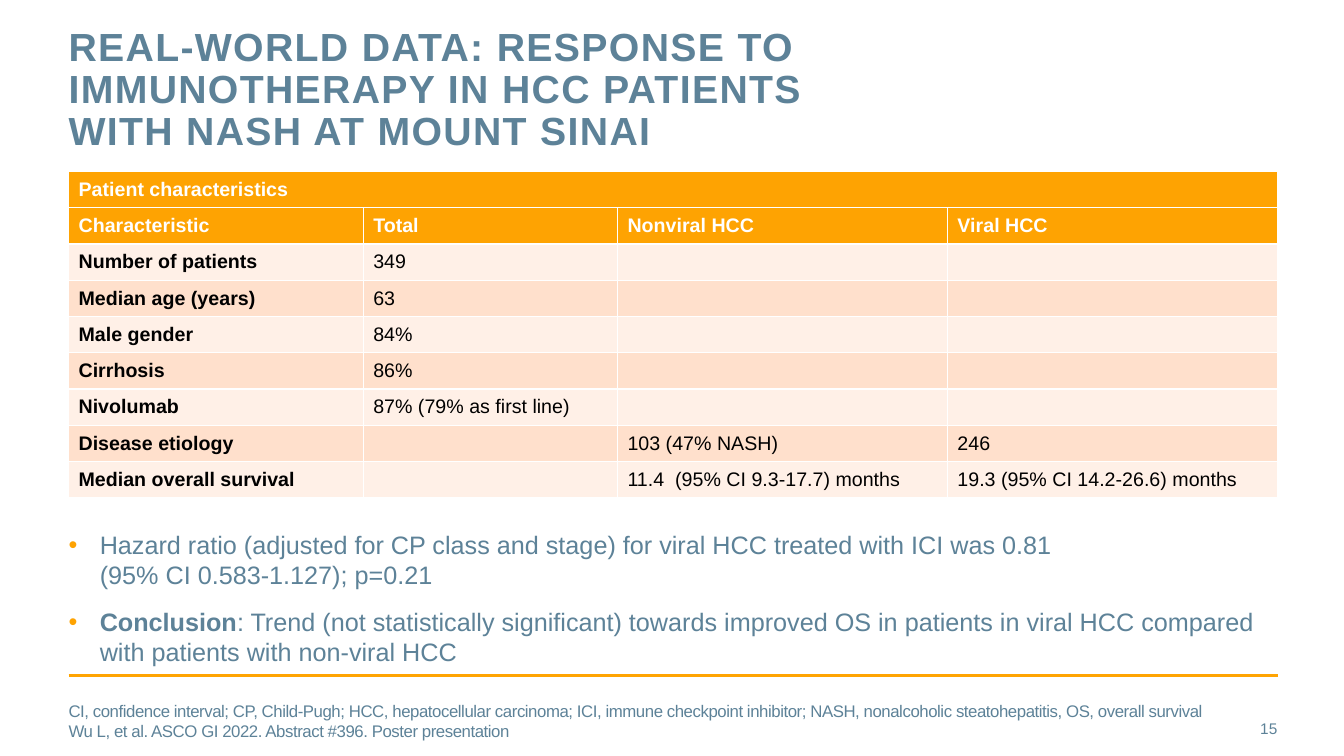
from lxml.etree import SubElement
from pptx import Presentation
from pptx.dml.color import RGBColor
from pptx.enum.shapes import MSO_CONNECTOR
from pptx.enum.text import MSO_ANCHOR, MSO_AUTO_SIZE, PP_ALIGN
from pptx.oxml.ns import qn
from pptx.util import Emu, Inches, Pt

SLATE = RGBColor(0x5D, 0x82, 0x98)
ORANGE = RGBColor(0xFE, 0xA3, 0x02)
RULE_ORANGE = RGBColor(0xFF, 0xA4, 0x02)
PALE_PEACH = RGBColor(0xFF, 0xF0, 0xE7)
PEACH = RGBColor(0xFF, 0xE0, 0xCC)
WHITE = RGBColor(0xFF, 0xFF, 0xFF)
BLACK = RGBColor(0, 0, 0)

FONT = "Arial"
LEFT, WIDTH = 0.68, 11.99
COLUMN_SHARES = (2.92, 2.52, 3.27, 3.27)
ROW_HEIGHT = 0.36
HEADER_ROWS = 2

CHARACTERISTICS = [
    ("Patient characteristics", "", "", ""),
    ("Characteristic", "Total", "Nonviral HCC", "Viral HCC"),
    ("Number of patients", "349", "", ""),
    ("Median age (years)", "63", "", ""),
    ("Male gender", "84%", "", ""),
    ("Cirrhosis", "86%", "", ""),
    ("Nivolumab", "87% (79% as first line)", "", ""),
    ("Disease etiology", "", "103 (47% NASH)", "246"),
    ("Median overall survival", "", "11.4  (95% CI 9.3-17.7) months",
     "19.3 (95% CI 14.2-26.6) months"),
]
FINDINGS = [
    [("Hazard ratio (adjusted for CP class and stage) for viral HCC treated "
      "with ICI was 0.81 \n(95% CI 0.583-1.127); p=0.21", False)],
    [("Conclusion", True),
     (": Trend (not statistically significant) towards improved OS in patients "
      "in viral HCC compared with patients with non-viral HCC", False)],
]
FOOTNOTES = [
    "CI, confidence interval; CP, Child-Pugh; HCC, hepatocellular carcinoma; "
    "ICI, immune checkpoint inhibitor; NASH, nonalcoholic steatohepatitis, "
    "OS, overall survival",
    "Wu L, et al. ASCO GI 2022. Abstract #396. Poster presentation",
]


def add_bullet(paragraph, indent=0.31):
    properties = paragraph._p.get_or_add_pPr()
    properties.set("marL", str(Inches(indent)))
    properties.set("indent", str(-Inches(indent)))
    bullet_color = SubElement(properties, qn("a:buClr"))
    SubElement(bullet_color, qn("a:srgbClr"), val=str(ORANGE))
    SubElement(properties, qn("a:buFont"), typeface=FONT)
    SubElement(properties, qn("a:buChar"), char="•")


def write_text(frame, paragraphs, *, size, color=SLATE, bold=False, tracking=0,
               align=PP_ALIGN.LEFT, line_spacing=None, gap=0, bullet=False):
    """Fill a frame; a paragraph is a string or a list of (text, bold) parts."""
    for index, content in enumerate(paragraphs):
        paragraph = frame.add_paragraph() if index else frame.paragraphs[0]
        if bullet:
            add_bullet(paragraph)
        paragraph.alignment = align
        paragraph.space_before = Pt(gap if index else 0)
        if line_spacing:
            paragraph.line_spacing = Pt(line_spacing)
        if not content:
            SubElement(paragraph._p, qn("a:endParaRPr"), sz=str(size * 100))
            continue
        parts = [(content, bold)] if isinstance(content, str) else content
        for text, part_bold in parts:
            for line_number, line in enumerate(text.split("\n")):
                if line_number:
                    paragraph.add_line_break()
                run = paragraph.add_run()
                run.text = line
                run.font.name = FONT
                run.font.size = Pt(size)
                run.font.bold = part_bold
                run.font.color.rgb = color
                if tracking:
                    run._r.get_or_add_rPr().set("spc", str(round(tracking * 100)))


def prepare_frame(frame, anchor):
    frame.margin_left = frame.margin_right = 0
    frame.margin_top = frame.margin_bottom = 0
    frame.word_wrap = True
    frame.auto_size = MSO_AUTO_SIZE.NONE
    frame.vertical_anchor = anchor
    return frame


def add_text(slide, box, paragraphs, anchor=MSO_ANCHOR.TOP, **text_format):
    textbox = slide.shapes.add_textbox(*map(Inches, box))
    write_text(prepare_frame(textbox.text_frame, anchor), paragraphs, **text_format)


def place_title(slide, box):
    title = slide.shapes.title
    title.left, title.top, title.width, title.height = map(Inches, box)
    write_text(
        prepare_frame(title.text_frame, MSO_ANCHOR.TOP),
        ["REAL-WORLD DATA: RESPONSE TO IMMUNOTHERAPY IN HCC PATIENTS "
         "WITH NASH AT MOUNT SINAI"],
        size=28, bold=True, tracking=1, line_spacing=30)


def set_borders(cell, top, bottom):
    properties = cell._tc.get_or_add_tcPr()
    for edge, points in (("L", 1), ("R", 1), ("T", top), ("B", bottom)):
        border = SubElement(properties, qn(f"a:ln{edge}"), w=str(Pt(points)))
        fill = SubElement(border, qn("a:solidFill"))
        SubElement(fill, qn("a:srgbClr"), val=str(WHITE))


def add_characteristics_table(slide, box):
    table = slide.shapes.add_table(
        len(CHARACTERISTICS), len(COLUMN_SHARES), *map(Inches, box)).table
    for column, share in zip(table.columns, COLUMN_SHARES):
        column.width = Inches(box[2] * share / sum(COLUMN_SHARES))
    for row_number, values in enumerate(CHARACTERISTICS):
        table.rows[row_number].height = Emu(Inches(box[3]) // len(CHARACTERISTICS))
        header = row_number < HEADER_ROWS
        band = PEACH if row_number % 2 else PALE_PEACH
        for column_number, value in enumerate(values):
            cell = table.cell(row_number, column_number)
            cell.margin_top = cell.margin_bottom = Inches(0.06)
            cell.vertical_anchor = MSO_ANCHOR.MIDDLE
            set_borders(cell,
                        top=2.25 if row_number == HEADER_ROWS else 1,
                        bottom=2.25 if row_number == HEADER_ROWS - 1 else 1)
            cell.fill.solid()
            cell.fill.fore_color.rgb = ORANGE if header else band
            write_text(cell.text_frame, [value], size=14,
                       color=WHITE if header else BLACK,
                       bold=header or column_number == 0)
    table.cell(0, 0).merge(table.cell(0, len(COLUMN_SHARES) - 1))


def add_footer(slide, box):
    left, top, width, height = box
    rule = slide.shapes.add_connector(
        MSO_CONNECTOR.STRAIGHT, Inches(left), Inches(top),
        Inches(left + width), Inches(top))
    rule.line.color.rgb = RULE_ORANGE
    rule.line.width = Pt(2)
    SubElement(rule._element.spPr, qn("a:effectLst"))
    add_text(slide, (left, top + 0.25, 11.5, height), FOOTNOTES,
             anchor=MSO_ANCHOR.MIDDLE, size=12, tracking=-0.3)
    add_text(slide, (left + width - 0.87, top + 0.33, 0.86, height), ["15"],
             anchor=MSO_ANCHOR.MIDDLE, size=11, align=PP_ALIGN.RIGHT)


def main():
    deck = Presentation()
    deck.slide_width, deck.slide_height = Inches(13.33), Inches(7.5)
    slide = deck.slides.add_slide(deck.slide_layouts.get_by_name("Title Only"))
    place_title(slide, (LEFT, 0.27, 8.12, 0.88))
    add_characteristics_table(
        slide, (LEFT, 1.7, WIDTH, ROW_HEIGHT * len(CHARACTERISTICS)))
    add_text(slide, (LEFT, 5.25, WIDTH, 0.79), FINDINGS,
             size=18, gap=12, bullet=True)
    add_footer(slide, (LEFT, 6.7, 12, 0.4))
    deck.save("out.pptx")


if __name__ == "__main__":
    main()
